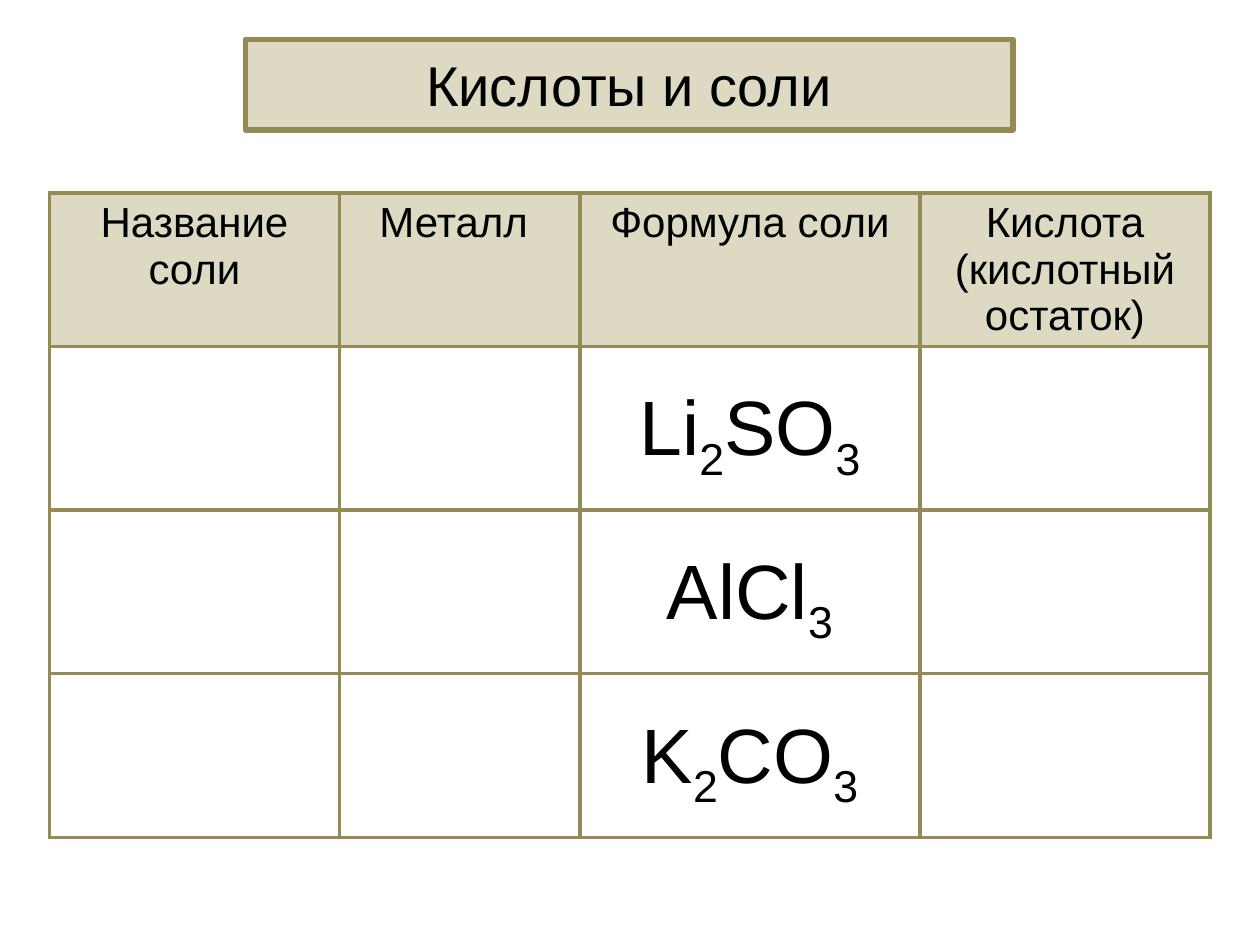
from dataclasses import dataclass

from lxml.etree import SubElement
from pptx import Presentation
from pptx.dml.color import RGBColor
from pptx.enum.text import MSO_ANCHOR, MSO_AUTO_SIZE, PP_ALIGN
from pptx.oxml.ns import qn
from pptx.util import Cm, Pt


@dataclass(frozen=True)
class Theme:
    font: str = "Arial"
    ink: str = "000000"
    sand: str = "DDD9C3"
    olive: str = "948A54"
    title_size: int = 32
    header_size: int = 24
    formula_size: int = 44
    title_line: float = 3
    grid_line: float = 2.25


THEME = Theme()
HEADINGS = ["Название соли", "Металл ", "Формула соли", "Кислота (кислотный остаток)"]
FORMULAS = [["Li", "2", "SO", "3"], ["AlCl", "3"], ["K", "2", "CO", "3"]]
FORMULA_COLUMN = 2
COLUMN_WIDTHS = [5.84, 4.85, 6.86, 5.84]
HEADER_HEIGHT = 3.09
SALT_HEIGHT = 3.3


def add_run(paragraph, text, size):
    run = paragraph.add_run()
    run.text = text
    run.font.name = THEME.font
    run.font.size = Pt(size)
    run.font.color.rgb = RGBColor.from_string(THEME.ink)
    return run


def paint(fill, color):
    fill.solid()
    fill.fore_color.rgb = RGBColor.from_string(color)


def set_title(slide, text):
    title = slide.shapes.title
    title.left, title.top, title.width, title.height = Cm(4.95), Cm(0.79), Cm(15.47), Cm(1.83)
    paint(title.fill, THEME.sand)
    paint(title.line.fill, THEME.olive)
    title.line.width = Pt(THEME.title_line)
    frame = title.text_frame
    frame.auto_size = MSO_AUTO_SIZE.NONE
    frame.vertical_anchor = MSO_ANCHOR.MIDDLE
    heading = frame.paragraphs[0]
    heading.alignment = PP_ALIGN.CENTER
    add_run(heading, text, THEME.title_size)


def add_borders(cell):
    properties = cell._tc.get_or_add_tcPr()
    for side in ("lnL", "lnR", "lnT", "lnB"):
        border = SubElement(properties, qn(f"a:{side}"), w=str(Pt(THEME.grid_line)))
        solid = SubElement(border, qn("a:solidFill"))
        SubElement(solid, qn("a:srgbClr"), val=THEME.olive)


def write_heading(cell, text):
    paint(cell.fill, THEME.sand)
    heading = cell.text_frame.paragraphs[0]
    heading.alignment = PP_ALIGN.CENTER
    add_run(heading, text, THEME.header_size)


def write_formula(cell, parts):
    cell.vertical_anchor = MSO_ANCHOR.MIDDLE
    cell.margin_left = cell.margin_right = Cm(0.18)
    cell.margin_top = cell.margin_bottom = 0
    formula = cell.text_frame.paragraphs[0]
    formula.alignment = PP_ALIGN.CENTER
    formula.line_spacing = 1.15
    for part in parts:
        run = add_run(formula, part, THEME.formula_size)
        if part.isdigit():
            run._r.get_or_add_rPr().set("baseline", "-25000")


def add_salt_table(slide):
    row_heights = [HEADER_HEIGHT] + [SALT_HEIGHT] * len(FORMULAS)
    salts = slide.shapes.add_table(
        len(row_heights), len(COLUMN_WIDTHS), Cm(1), Cm(3.89),
        Cm(sum(COLUMN_WIDTHS)), Cm(sum(row_heights)),
    ).table
    salts.first_row = salts.horz_banding = False
    for column, width in zip(salts.columns, COLUMN_WIDTHS):
        column.width = Cm(width)
    for row, height in zip(salts.rows, row_heights):
        row.height = Cm(height)
    for cell in salts.iter_cells():
        add_borders(cell)
        cell.fill.background()
    for column, heading in enumerate(HEADINGS):
        write_heading(salts.cell(0, column), heading)
    for row, parts in enumerate(FORMULAS, start=1):
        write_formula(salts.cell(row, FORMULA_COLUMN), parts)


def main():
    deck = Presentation()
    deck.slide_width, deck.slide_height = Cm(25.4), Cm(19.05)
    slide = deck.slides.add_slide(deck.slide_layouts.get_by_name("Title Only"))
    set_title(slide, "Кислоты и соли")
    add_salt_table(slide)
    deck.save("out.pptx")


if __name__ == "__main__":
    main()
